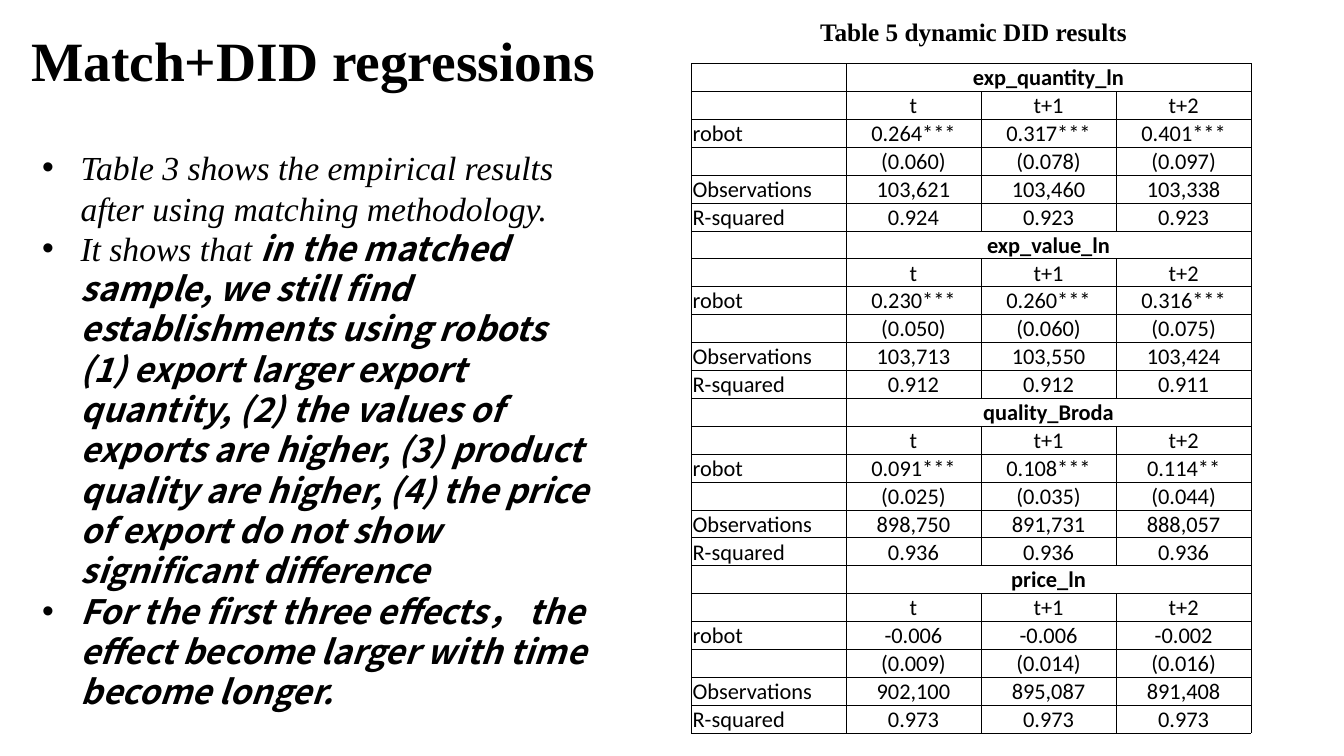
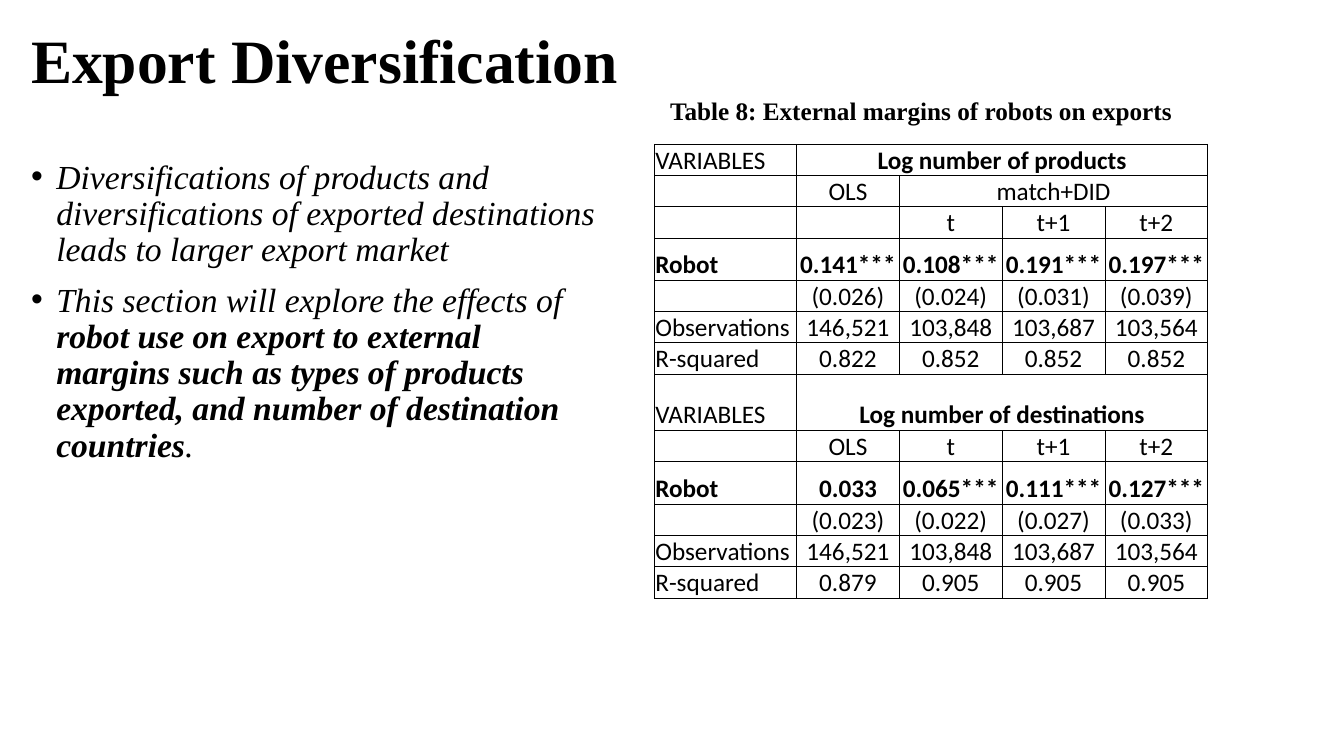
import pptx
import pptx.dml.color
import pptx.enum.text
import pptx.oxml
import pptx.oxml.ns
import pptx.util
from pptx.util import Inches

SERIF, SANS, CJK = "Times New Roman", "Calibri", "Noto Sans CJK SC"
INK = "000000"
ALIGN = pptx.enum.text.PP_ALIGN
ANCHOR = pptx.enum.text.MSO_ANCHOR
STEPS = ["t", "t+1", "t+2"]


def paint(font, colour):
    """Give a font a colour from a hex string."""
    font.color.rgb = pptx.dml.color.RGBColor.from_string(colour)


def style(para, size, name=SERIF, bold=False, italic=False):
    """Set the font of a whole paragraph."""
    font = para.font
    font.size, font.name = pptx.util.Pt(size), name
    font.bold, font.italic = bold, italic
    paint(font, INK)


def frame(slide, box, anchor=ANCHOR.TOP):
    """Add a wrapping text box and return its text frame."""
    text = slide.shapes.add_textbox(*map(Inches, box)).text_frame
    text.word_wrap = True
    text.vertical_anchor = anchor
    return text


def title(slide, words, width, size):
    """Place the slide title at the top left."""
    para = frame(slide, (0.21, 0.11, width, 1.04), ANCHOR.MIDDLE).paragraphs[0]
    para.text = words
    para.line_spacing = 0.9
    style(para, size, bold=True)


def label(slide, box, words):
    """Place a centred table caption at the foot of its box."""
    para = frame(slide, box, ANCHOR.BOTTOM).paragraphs[0]
    para.text = words
    para.alignment = ALIGN.CENTER
    style(para, 18, bold=True)


def bullets(slide, box, items, indent, strong, spacing=1.0, before=0):
    """Write bulleted items, each a list of (words, bold) parts."""
    text = frame(slide, box)
    for i, parts in enumerate(items):
        para = text.add_paragraph() if i else text.paragraphs[0]
        para.line_spacing = spacing
        para.space_before = pptx.util.Pt(before)
        style(para, 24, italic=True)
        props = para._p.get_or_add_pPr()
        props.set("marL", str(Inches(indent)))
        props.set("indent", str(-Inches(indent)))
        space = pptx.oxml.ns.nsdecls("a")
        for pos, tag in enumerate(('buFont typeface="Arial"', 'buChar char="•"')):
            props.insert(len(props) - 1, pptx.oxml.parse_xml(f"<a:{tag} {space}/>"))
        for words, bold in parts:
            run = para.add_run()
            run.text = words
            if bold:
                run.font.bold = True
                run.font.name = strong


def edge(cell):
    """Draw thin lines on all four sides of a cell."""
    props = cell._tc.get_or_add_tcPr()
    for side in "LRTB":
        props.append(pptx.oxml.parse_xml(
            f'<a:ln{side} {pptx.oxml.ns.nsdecls("a")} w="{pptx.util.Pt(0.5)}">'
            f'<a:solidFill><a:srgbClr val="{INK}"/></a:solidFill></a:ln{side}>'))


def fill(cell, words, size, bold, align):
    """Write one table cell with its margins and lines."""
    edge(cell)
    cell.fill.background()
    cell.vertical_anchor = ANCHOR.BOTTOM
    cell.margin_left = cell.margin_right = cell.margin_top = Inches(0.01)
    cell.margin_bottom = 0
    para = cell.text_frame.paragraphs[0]
    para.text = words
    para.alignment = align
    style(para, size, SANS, bold)
    if not words:
        para._p.get_or_add_endParaRPr().set("sz", str(size * 100))


def grid(slide, spot, rows, widths, heights, size):
    """Place a table; the last entry of a short row spans the rest."""
    count = len(widths)
    shape = slide.shapes.add_table(
        len(rows), count, *map(Inches, (*spot, sum(widths), sum(heights))))
    table = shape.table
    table.first_row = table.horz_banding = False
    for col, width in zip(table.columns, widths):
        col.width = Inches(width)
    for r, (row, height) in enumerate(zip(rows, heights)):
        table.rows[r].height = Inches(height)
        bold = len(row) == 2 or row[0] == "Robot"
        for c in range(count):
            words = row[c] if c < len(row) else ""
            fill(table.cell(r, c), words, size, bold and (c > 0 or row[0] == "Robot"),
                 ALIGN.CENTER if c else ALIGN.LEFT)
        if len(row) < count:
            table.cell(r, len(row) - 1).merge(table.cell(r, count - 1))


def stats(name, *values):
    """Make the four result rows of one regression."""
    heads = name, "", "Observations", "R-squared"
    return [[head, *line.split()] for head, line in zip(heads, values)]


def match(slide):
    """Build the slide on matched regressions."""
    title(slide, "Match+DID regressions", 5.89, 39.6)
    label(slide, (8.02, 0.11, 3.27, 0.4), "Table 5 dynamic DID results")
    bullets(slide, (0.32, 1.41, 5.71, 5.35), [
        [("Table 3 shows the empirical results after using matching methodology.", False)],
        [("It shows that ", False),
         ("in the matched sample, we still find establishments using robots "
          "(1) export larger export quantity, (2) the values of exports are higher, "
          "(3) product quality are higher, (4) the price of export do not show "
          "significant difference", True)],
        [("For the first three effects， the effect become larger with time "
          "become longer.", True)],
    ], 0.38, CJK)
    panels = {
        "exp_quantity_ln": ("0.264*** 0.317*** 0.401***", "(0.060) (0.078) (0.097)",
                            "103,621 103,460 103,338", "0.924 0.923 0.923"),
        "exp_value_ln": ("0.230*** 0.260*** 0.316***", "(0.050) (0.060) (0.075)",
                         "103,713 103,550 103,424", "0.912 0.912 0.911"),
        "quality_Broda": ("0.091*** 0.108*** 0.114**", "(0.025) (0.035) (0.044)",
                          "898,750 891,731 888,057", "0.936 0.936 0.936"),
        "price_ln": ("-0.006 -0.006 -0.002", "(0.009) (0.014) (0.016)",
                     "902,100 895,087 891,408", "0.973 0.973 0.973"),
    }
    rows = []
    for head, values in panels.items():
        rows += [["", head], ["", *STEPS], *stats("robot", *values)]
    grid(slide, (6.86, 0.63), rows, [1.53] + [1.34] * 3, [0.27] * len(rows), 16)


def margins(slide):
    """Build the slide on export diversification."""
    title(slide, "Export Diversification", 11.5, 44)
    bullets(slide, (0.21, 1.54, 5.82, 5.76), [
        [("Diversifications of products and diversifications of exported "
          "destinations leads to larger export market", False)],
        [("This section will explore the effects of ", False),
         ("robot use on export to external margins such as types of products "
          "exported, and number of destination countries", True),
         (".", False)],
    ], 0.25, SERIF, 0.9, 10)
    label(slide, (6.35, 0.74, 5.57, 0.56), "Table 8: External margins of robots on exports")
    rows = [
        ["VARIABLES", "Log number of products"],
        ["", "OLS", "match+DID"],
        ["", "", *STEPS],
        *stats("Robot", "0.141*** 0.108*** 0.191*** 0.197***",
               "(0.026) (0.024) (0.031) (0.039)",
               "146,521 103,848 103,687 103,564", "0.822 0.852 0.852 0.852"),
        ["VARIABLES", "Log number of destinations"],
        ["", "OLS", *STEPS],
        *stats("Robot", "0.033 0.065*** 0.111*** 0.127***",
               "(0.023) (0.022) (0.027) (0.033)",
               "146,521 103,848 103,687 103,564", "0.879 0.905 0.905 0.905"),
    ]
    heights = [0.42 if row[0] == "Robot" else 0.3 for row in rows]
    heights[7] = 0.56
    grid(slide, (6.49, 1.43), rows, [1.41] + [1.02] * 4, heights, 18)


def main():
    """Build and save the deck."""
    deck = pptx.Presentation()
    deck.slide_width, deck.slide_height = Inches(13.33), Inches(7.5)
    for build in (match, margins):
        build(deck.slides.add_slide(deck.slide_layouts[6]))
    deck.save("out.pptx")


if __name__ == "__main__":
    main()
